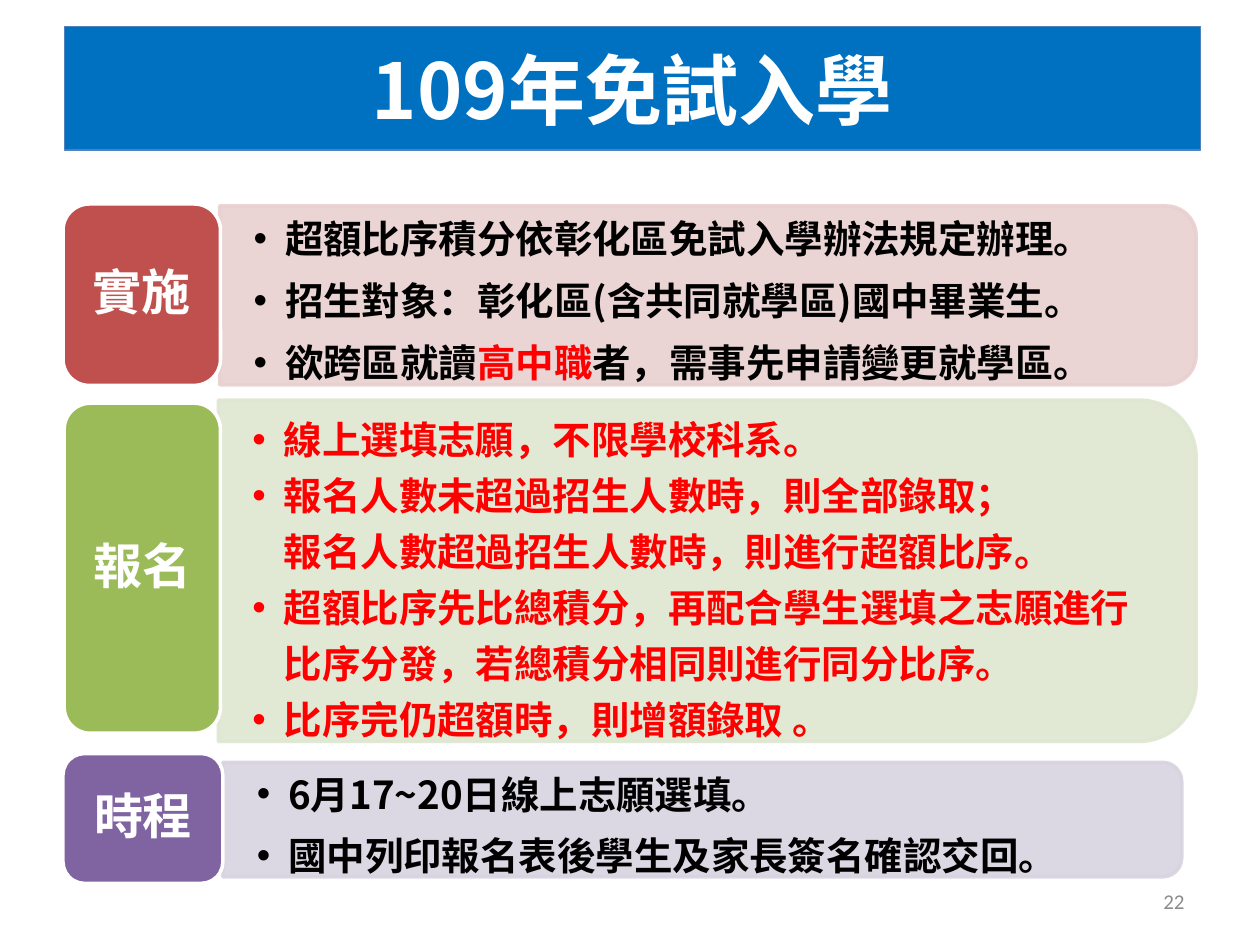
from dataclasses import dataclass

from lxml import etree
from pptx import Presentation
from pptx.dml.color import RGBColor
from pptx.enum import shapes, text
from pptx.oxml import ns
from pptx.util import Pt


@dataclass(frozen=True)
class Theme:
    cjk: str = "Noto Sans CJK SC"
    latin: str = "Calibri"
    title: int = 44
    label: int = 28
    body: int = 22
    number: int = 12
    white: str = "FFFFFF"
    black: str = "000000"
    red: str = "FF0000"
    gray: str = "8C8C8C"
    banner: str = "0070C0"
    banner_edge: str = "4F81BD"


THEME = Theme()
CORNER_INSET = 0.0488
TITLE = "109年免試入學"
PAGE_NUMBER = "22"
SECTIONS = [
    {
        "label": "實施", "fill": "C0504D", "tint": "E8D0D0", "color": THEME.black,
        "label_area": (36, 116.6, 90, 103.7), "panel_area": (125.5, 117.7, 558, 102.2),
        "leading": (32, 32, 32), "gap": 3.3,
        "items": [
            [("超額比序積分依彰化區免試入學辦法規定辦理。", None)],
            [("招生對象：彰化區(含共同就學區)國中畢業生。", None)],
            [("欲跨區就讀", None), ("高中職", THEME.red), ("者，需事先申請變更就學區。", None)],
        ],
    },
    {
        "label": "報名", "fill": "9BBB59", "tint": "DEE7D1", "color": THEME.red,
        "label_area": (36.7, 230.4, 89.3, 188.6), "panel_area": (124.8, 228.6, 558.7, 195.1),
        "leading": (36, 32, 32, 32), "gap": 0,
        "items": [
            [("線上選填志願，不限學校科系。", None)],
            [("報名人數未超過招生人數時，則全部錄取；\n報名人數超過招生人數時，則進行超額比序。", None)],
            [("超額比序先比總積分，再配合學生選填之志願進行比序分發，若總積分相同則進行同分比序。", None)],
            [("比序完仍超額時，則增額錄取 。", None)],
        ],
    },
    {
        "label": "時程", "fill": "8064A2", "tint": "D8D3E0", "color": THEME.black,
        "label_area": (36, 430.6, 91.4, 74.2), "panel_area": (127.4, 435.6, 547.9, 65.5),
        "leading": (32, 32), "gap": 3.3,
        "items": [
            [("6月17~20日線上志願選填。", None)],
            [("國中列印報名表後學生及家長簽名確認交回。", None)],
        ],
    },
]


def add_block(page, kind, area, fill, edge, width):
    box = page.shapes.add_shape(kind, *map(Pt, area))
    box.shadow.inherit = False
    box.fill.solid()
    box.fill.fore_color.rgb = RGBColor.from_string(fill)
    box.line.color.rgb = RGBColor.from_string(edge)
    box.line.width = Pt(width)
    return box


def add_panel(page, area, tint):
    left, top, width, height = area
    shift = (width - height) / 2
    box = add_block(page, shapes.MSO_SHAPE.ROUND_2_SAME_RECTANGLE,
                    (left + shift, top - shift, height, width), tint, tint, 2)
    box.rotation = 90
    for color in box._element.spPr.iter(ns.qn("a:srgbClr")):
        etree.SubElement(color, ns.qn("a:alpha"), val="90000")


def set_frame(box, horizontal, vertical):
    frame = box.text_frame
    frame.word_wrap = True
    frame.vertical_anchor = text.MSO_ANCHOR.MIDDLE
    frame.margin_left = frame.margin_right = Pt(horizontal)
    frame.margin_top = frame.margin_bottom = Pt(vertical)
    return frame


def add_text_box(page, area, horizontal, vertical):
    return set_frame(page.shapes.add_textbox(*map(Pt, area)), horizontal, vertical)


def set_font(para, name, size, color, bold):
    font = para.font
    font.name, font.size, font.bold = name, Pt(size), bold
    font.color.rgb = RGBColor.from_string(color)
    etree.SubElement(font._element, ns.qn("a:ea"), typeface=name)


def write_line(frame, wording, size, color, align, name=THEME.cjk, bold=True):
    para = frame.paragraphs[0]
    para.text = wording
    para.alignment = align
    set_font(para, name, size, color, bold)
    return para


def add_bullet(para):
    props = para._p.get_or_add_pPr()
    props.set("marL", str(Pt(18)))
    props.set("indent", str(-Pt(18)))
    etree.SubElement(props, ns.qn("a:buFont"), typeface="Arial")
    etree.SubElement(props, ns.qn("a:buChar"), char="•")


def write_items(frame, section):
    for index, (item, leading) in enumerate(zip(section["items"], section["leading"])):
        para = frame.add_paragraph() if index else frame.paragraphs[0]
        para.level = 1
        para.alignment = text.PP_ALIGN.LEFT
        para.line_spacing = Pt(leading)
        para.space_before = Pt(0)
        para.space_after = Pt(section["gap"])
        add_bullet(para)
        set_font(para, THEME.cjk, THEME.body, section["color"], True)
        for wording, color in item:
            for number, line in enumerate(wording.split("\n")):
                if number:
                    para.add_line_break()
                span = para.add_run()
                span.text = line
                if color:
                    span.font.color.rgb = RGBColor.from_string(color)


def add_section(page, section):
    left, top, width, height = section["panel_area"]
    add_panel(page, section["panel_area"], section["tint"])
    inset = CORNER_INSET * height
    frame = add_text_box(page, (left, top + inset, width - inset, height - 2 * inset), 19.4, 10.1)
    write_items(frame, section)

    left, top, width, height = section["label_area"]
    add_block(page, shapes.MSO_SHAPE.ROUNDED_RECTANGLE, section["label_area"],
              section["fill"], THEME.white, 2)
    inset = CORNER_INSET * min(width, height)
    frame = add_text_box(page, (left + inset, top + inset, width - 2 * inset, height - 2 * inset), 8.6, 4.3)
    para = write_line(frame, section["label"], THEME.label, THEME.white, text.PP_ALIGN.CENTER)
    para.line_spacing = 0.9


def main():
    deck = Presentation()
    deck.slide_width, deck.slide_height = Pt(720), Pt(540)
    page = deck.slides.add_slide(deck.slide_layouts[6])
    banner = add_block(page, shapes.MSO_SHAPE.RECTANGLE, (36.7, 15.1, 649.4, 70.6),
                       THEME.banner, THEME.banner_edge, 0.75)
    write_line(set_frame(banner, 7.2, 3.6), TITLE, THEME.title, THEME.white, text.PP_ALIGN.CENTER)
    for section in SECTIONS:
        add_section(page, section)
    frame = add_text_box(page, (516, 500.4, 168, 28.8), 7.2, 3.6)
    write_line(frame, PAGE_NUMBER, THEME.number, THEME.gray, text.PP_ALIGN.RIGHT, THEME.latin, False)
    deck.save("out.pptx")


if __name__ == "__main__":
    main()
